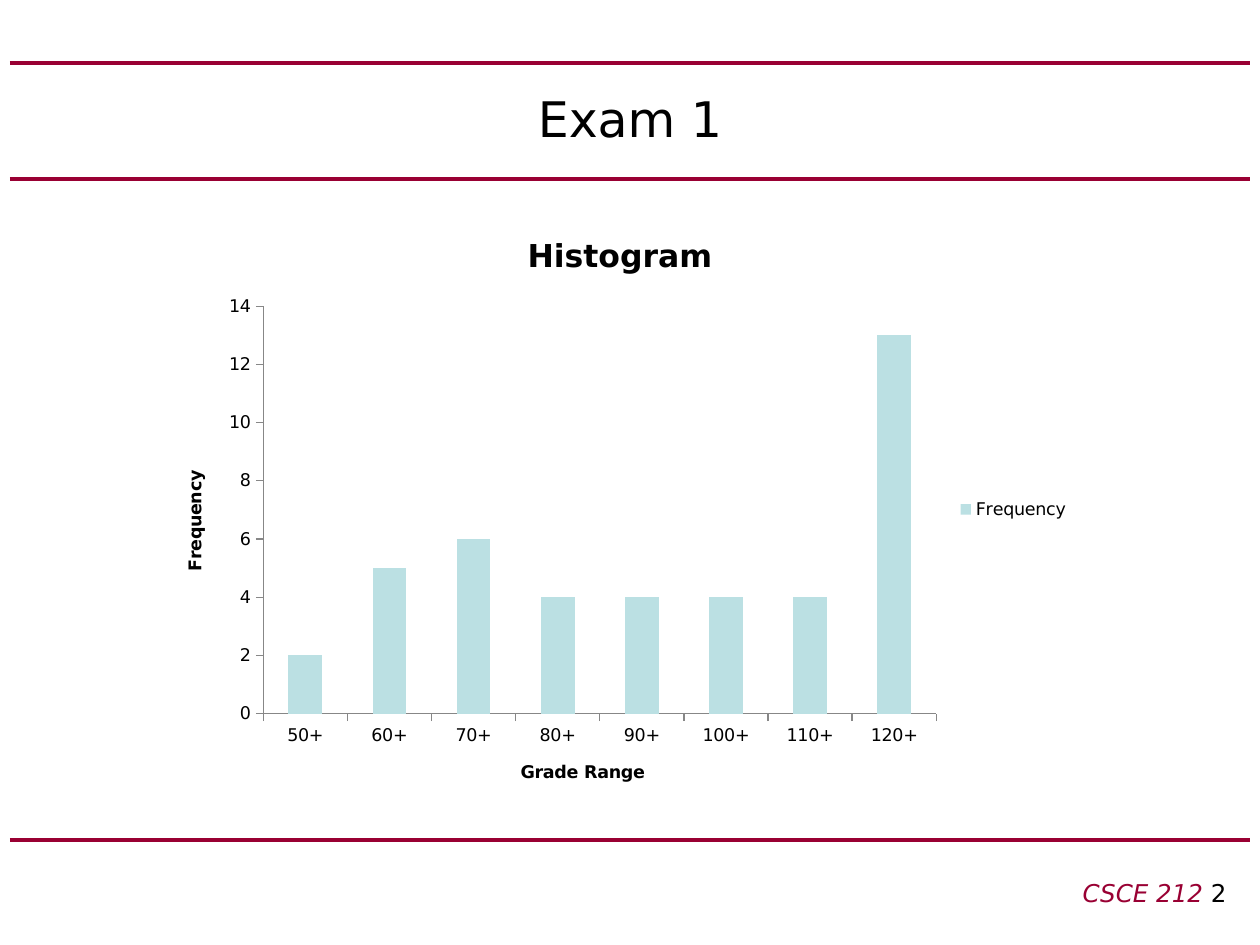
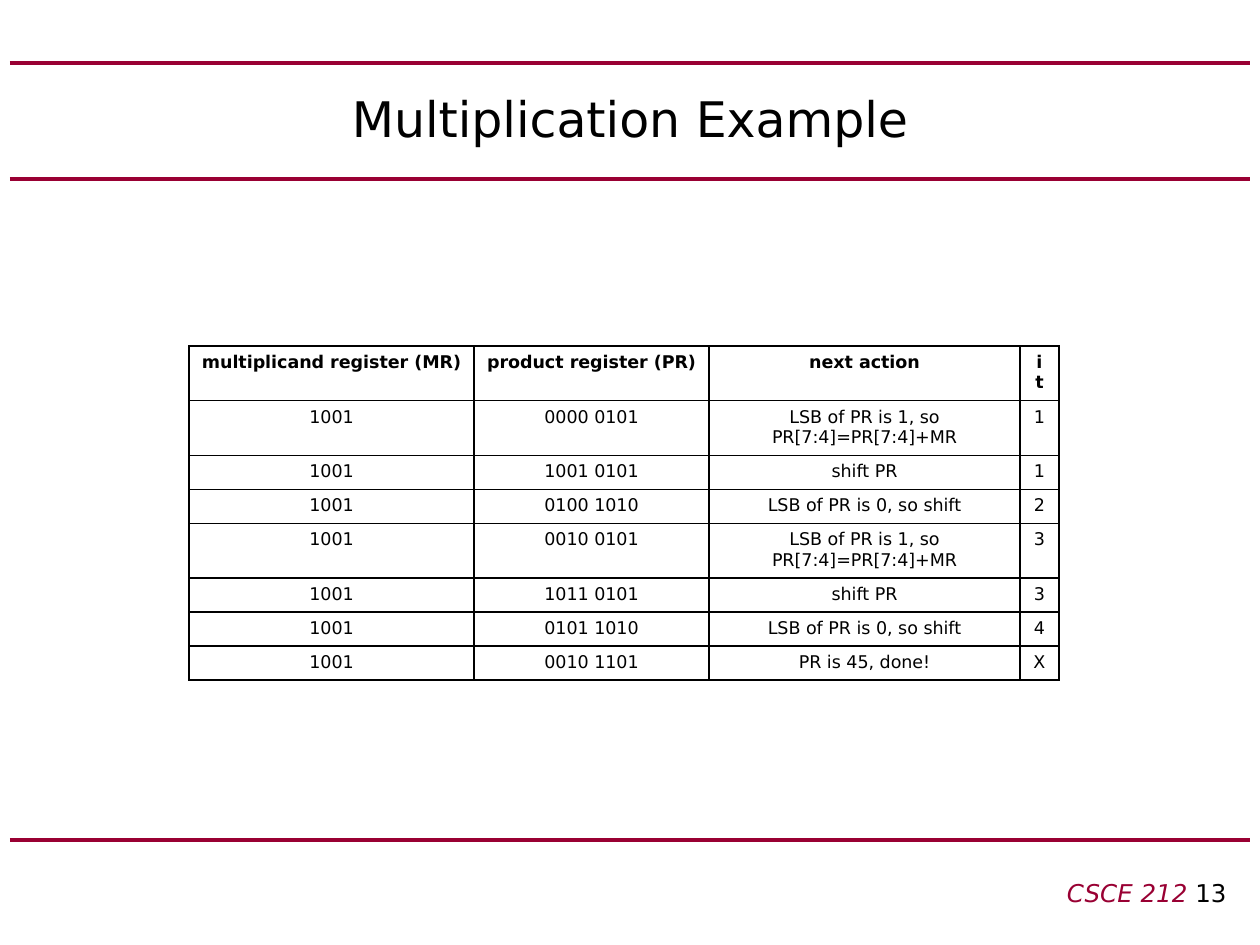
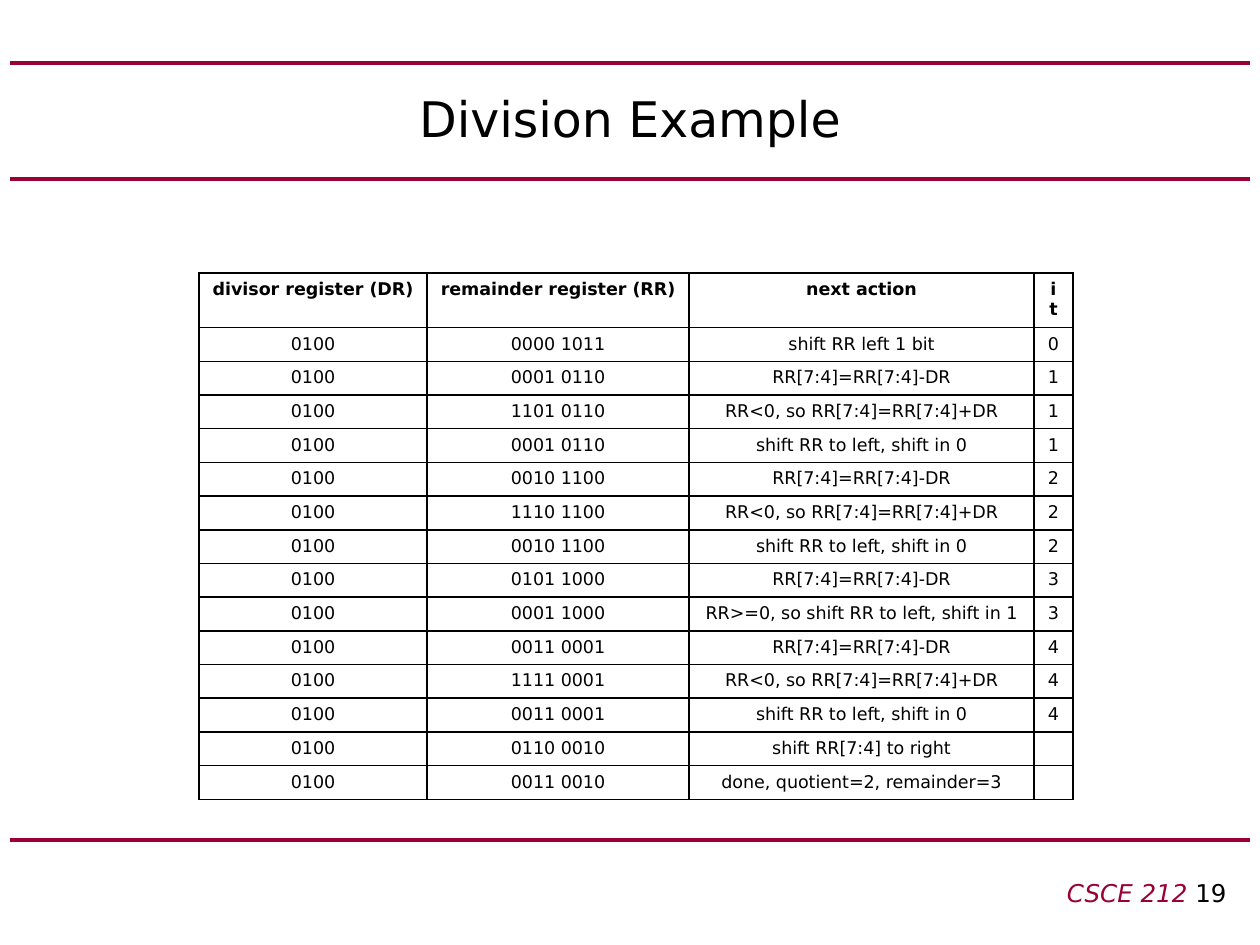
from lxml.etree import SubElement
from pptx import Presentation
from pptx.chart.data import CategoryChartData
from pptx.dml.color import RGBColor
from pptx.enum.chart import XL_CHART_TYPE, XL_LEGEND_POSITION, XL_TICK_MARK
from pptx.enum.shapes import MSO_CONNECTOR
from pptx.enum.text import MSO_ANCHOR, PP_ALIGN
from pptx.oxml.ns import qn
from pptx.util import Pt

SCALE = 914400 / 126
FONT = "DejaVu Sans"
COLORS = {"garnet": "990033", "ink": "000000", "paper": "FFFFFF", "bar": "BBE0E3", "axis": "878787"}


def px(*lengths):
    return [round(length * SCALE) for length in lengths]


def style(font, size, color="ink", bold=False, italic=False):
    font.name = FONT
    font.size = Pt(size)
    font.bold = bold
    font.italic = italic
    font.color.rgb = RGBColor.from_string(COLORS[color])


deck = Presentation()
deck.slide_width, deck.slide_height = px(1260, 945)

pages = {}
for heading, number in [("Exam 1", "2"), ("Multiplication Example", "13"), ("Division Example", "19")]:
    slide = deck.slides.add_slide(deck.slide_layouts[6])
    slide.background.fill.solid()
    slide.background.fill.fore_color.rgb = RGBColor.from_string(COLORS["paper"])
    pages[heading] = slide

    for y in (840, 179, 63):
        rule = slide.shapes.add_connector(MSO_CONNECTOR.STRAIGHT, *px(10, y, 1250, y))
        rule.line.color.rgb = RGBColor.from_string(COLORS["garnet"])
        rule.line.width = Pt(2.25)
        SubElement(rule._element.spPr, qn("a:effectLst"))

    title = slide.shapes.add_textbox(*px(63, 63, 1134, 110)).text_frame
    title.word_wrap = True
    title.vertical_anchor = MSO_ANCHOR.MIDDLE
    title.paragraphs[0].alignment = PP_ALIGN.CENTER
    run = title.paragraphs[0].add_run()
    run.text = heading
    style(run.font, 28)

    footer = slide.shapes.add_textbox(*px(473, 872, 766, 42)).text_frame
    footer.word_wrap = True
    footer.paragraphs[0].alignment = PP_ALIGN.RIGHT
    for text, color, italic in [("CSCE 212 ", "garnet", True), (number, "ink", False)]:
        run = footer.paragraphs[0].add_run()
        run.text = text
        style(run.font, 14, color, italic=italic)

grades = CategoryChartData()
grades.categories = [f"{low}+" for low in range(50, 130, 10)]
grades.add_series("Frequency", (2, 5, 6, 4, 4, 4, 4, 13))
histogram = pages["Exam 1"].shapes.add_chart(
    XL_CHART_TYPE.COLUMN_CLUSTERED, *px(158, 210, 924, 599), grades).chart
style(histogram.font, 10)
histogram.has_title = True
histogram.has_legend = True
histogram.legend.position = XL_LEGEND_POSITION.RIGHT
histogram.legend.include_in_layout = False
for part, text, size in [(histogram, "Histogram", 18),
                         (histogram.category_axis, "Grade Range", 10),
                         (histogram.value_axis, "Frequency", 10)]:
    label = part.chart_title if part is histogram else part.axis_title
    run = label.text_frame.paragraphs[0].add_run()
    run.text = text
    style(run.font, size, bold=True)
for axis in (histogram.category_axis, histogram.value_axis):
    axis.has_major_gridlines = False
    axis.major_tick_mark = XL_TICK_MARK.OUTSIDE
    axis.minor_tick_mark = XL_TICK_MARK.NONE
    axis.format.line.color.rgb = RGBColor.from_string(COLORS["axis"])
histogram.value_axis.minimum_scale = 0
histogram.value_axis.maximum_scale = 14
histogram.value_axis.major_unit = 2
bars = histogram.plots[0]
bars.gap_width = 150
bars.vary_by_categories = False
bars.series[0].format.fill.solid()
bars.series[0].format.fill.fore_color.rgb = RGBColor.from_string(COLORS["bar"])

add_step = "LSB of PR is 1, so PR[7:4]=PR[7:4]+MR"
shift_step = "LSB of PR is 0, so shift"
multiplication = [
    ("multiplicand register (MR)", "product register (PR)", "next action", "it"),
    ("1001", "0000 0101", add_step, "1"),
    ("1001", "1001 0101", "shift PR", "1"),
    ("1001", "0100 1010", shift_step, "2"),
    ("1001", "0010 0101", add_step, "3"),
    ("1001", "1011 0101", "shift PR", "3"),
    ("1001", "0101 1010", shift_step, "4"),
    ("1001", "0010 1101", "PR is 45, done!", "X"),
]
subtract = "RR[7:4]=RR[7:4]-DR"
restore = "RR<0, so RR[7:4]=RR[7:4]+DR"
shift_in_0 = "shift RR to left, shift in 0"
division = [
    ("divisor register (DR)", "remainder register (RR)", "next action", "it"),
    ("0100", "0000 1011", "shift RR left 1 bit", "0"),
    ("0100", "0001 0110", subtract, "1"),
    ("0100", "1101 0110", restore, "1"),
    ("0100", "0001 0110", shift_in_0, "1"),
    ("0100", "0010 1100", subtract, "2"),
    ("0100", "1110 1100", restore, "2"),
    ("0100", "0010 1100", shift_in_0, "2"),
    ("0100", "0101 1000", subtract, "3"),
    ("0100", "0001 1000", "RR>=0, so shift RR to left, shift in 1", "3"),
    ("0100", "0011 0001", subtract, "4"),
    ("0100", "1111 0001", restore, "4"),
    ("0100", "0011 0001", shift_in_0, "4"),
    ("0100", "0110 0010", "shift RR[7:4] to right", ""),
    ("0100", "0011 0010", "done, quotient=2, remainder=3", ""),
]

for heading, steps, left, top, widths, heights in [
    ("Multiplication Example", multiplication, 189, 346, (285, 235, 311, 39),
     [54 if step[2] in ("next action", add_step) else 34 for step in multiplication]),
    ("Division Example", division, 199, 273, (228, 262, 345, 39), [53] + [33] * 14),
]:
    trace = pages[heading].shapes.add_table(
        len(steps), len(widths), *px(left, top, sum(widths), sum(heights))).table
    trace.first_row = False
    trace.horz_banding = False
    for column, width in zip(trace.columns, px(*widths)):
        column.width = width
    for row, height in zip(trace.rows, px(*heights)):
        row.height = height
    for r, step in enumerate(steps):
        for c, text in enumerate(step):
            cell = trace.cell(r, c)
            paragraph = cell.text_frame.paragraphs[0]
            paragraph.alignment = PP_ALIGN.CENTER
            if text:
                run = paragraph.add_run()
                run.text = text
                style(run.font, 10, bold=r == 0)
            else:
                SubElement(paragraph._p, qn("a:endParaRPr"), sz="1000")
            properties = cell._tc.get_or_add_tcPr()
            for side in ("a:lnL", "a:lnR", "a:lnT", "a:lnB"):
                border = SubElement(properties, qn(side), w=str(Pt(1)))
                SubElement(SubElement(border, qn("a:solidFill")), qn("a:srgbClr"), val=COLORS["ink"])
            cell.fill.background()

deck.save("out.pptx")
